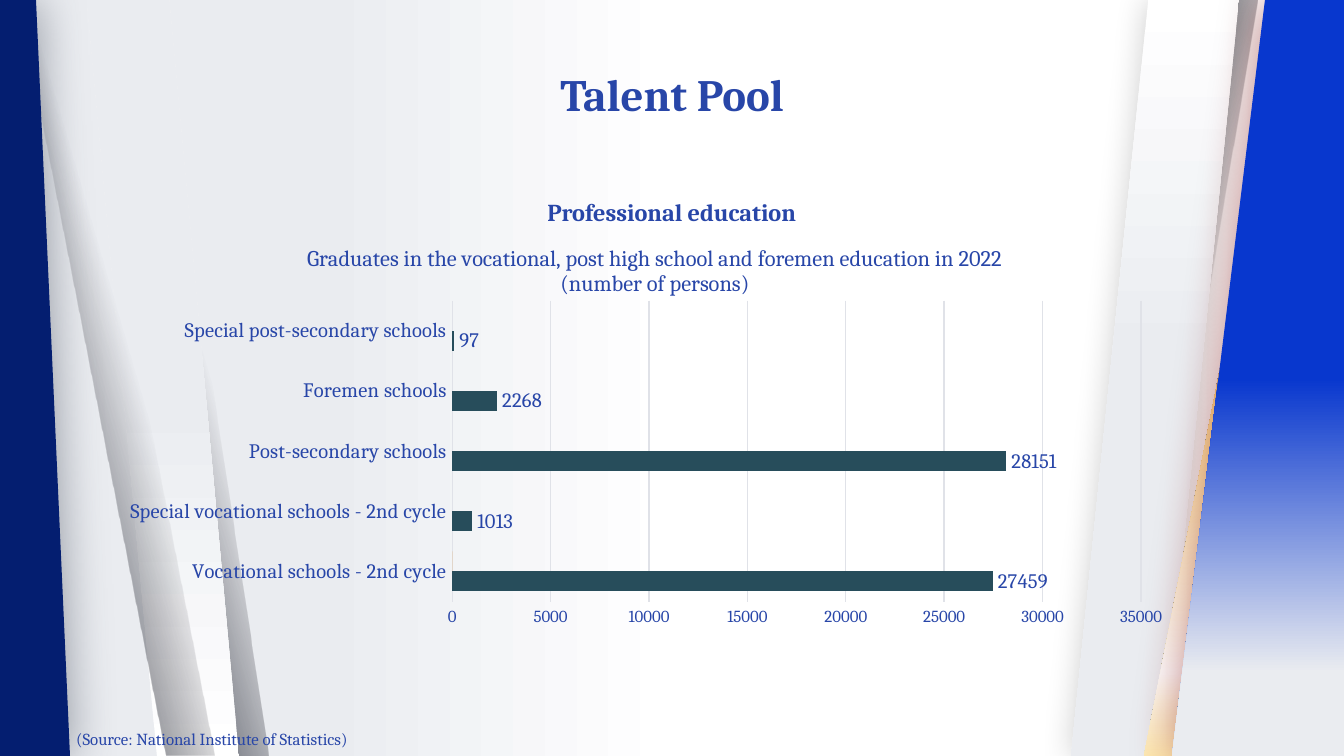
import pptx
import pptx.chart.data
import pptx.dml.color
import pptx.enum.chart
import pptx.enum.shapes
import pptx.enum.text
import pptx.oxml.ns
import pptx.util
from lxml import etree

WIDTH, HEIGHT = 1344, 756
EMU_PER_PX = 9144000 / WIDTH
FONT = "Cambria"
COLORS = {
    "text": "2846A8", "navy": "041E70", "blue": "0837CE", "white": "FFFFFF",
    "mist": "EAECF0", "slate": "3E4655", "coal": "27252C", "gold": "FFDF8C",
    "cream": "FFEAB3", "wine": "7E0808", "black": "000000",
    "grid": "E0E2E8", "bar": "274D5B", "orange": "F78300",
}
SHADE = [(0, "slate"), (13, "slate"), (55, "coal", 0), (100, "coal", 0)]
PANEL = [(0, "white"), (47, "mist"), (100, "mist")]
BACKDROP = [(0, "white"), (50, "white"), (76, "mist"), (100, "mist")]
GLOW = [(0, "blue"), (50, "gold"), (89, "white"), (100, "cream")]
FADE = [(0, "blue"), (50, "blue"), (89, "mist"), (100, "mist")]

GRADUATES = {
    "Vocational schools - 2nd cycle": 27459,
    "Special vocational schools - 2nd cycle": 1013,
    "Post-secondary schools": 28151,
    "Foremen schools": 2268,
    "Special post-secondary schools": 97,
}

qn = pptx.oxml.ns.qn


def px(value):
    return pptx.util.Emu(round(value * EMU_PER_PX))


def rgb(name):
    return pptx.dml.color.RGBColor.from_string(COLORS[name])


def add(parent, tag, **attributes):
    values = {key: str(value) for key, value in attributes.items()}
    return etree.SubElement(parent, qn(tag), values)


def add_color(parent, name, opacity=100):
    color = add(parent, "a:srgbClr", val=COLORS[name])
    if opacity < 100:
        add(color, "a:alpha", val=opacity * 1000)


def set_layout(parent, **values):
    """Place a chart part by fractions of the chart area."""
    layout = parent.find(qn("c:layout"))
    if layout is None:
        layout = add(parent, "c:layout")
        if parent.tag == qn("c:title"):
            parent.find(qn("c:tx")).addnext(layout)
        else:
            parent.insert(0, layout)
    manual = add(layout, "c:manualLayout")
    if "w" in values:
        add(manual, "c:layoutTarget", val="inner")
    for key in ("x", "y"):
        add(manual, f"c:{key}Mode", val="edge")
    for key, value in values.items():
        add(manual, f"c:{key}", val=value)


class SlideBuilder:
    def __init__(self, page):
        self.page = page

    def style_font(self, font, size, bold=False):
        font.name, font.size, font.bold = FONT, pptx.util.Pt(size), bold
        font.color.rgb = rgb("text")

    def gradient(self, fill, holder, stops, angle):
        fill.solid()
        solid = holder.find(qn("a:solidFill"))
        grad = etree.Element(qn("a:gradFill"), rotWithShape="1")
        stop_list = add(grad, "a:gsLst")
        for position, *color in stops:
            add_color(add(stop_list, "a:gs", pos=position * 1000), *color)
        add(grad, "a:lin", ang=angle * 60000, scaled=0)
        holder.replace(solid, grad)

    def background(self, stops, angle):
        fill = self.page.background.fill
        fill.solid()
        holder = self.page._element.find(".//" + qn("p:bgPr"))
        self.gradient(fill, holder, stops, angle)

    def finish(self, shape, fill, angle, shadow):
        shape.shadow.inherit = False
        shape.line.fill.background()
        properties = shape._element.spPr
        if isinstance(fill, str):
            shape.fill.solid()
            shape.fill.fore_color.rgb = rgb(fill)
        else:
            self.gradient(shape.fill, properties, fill, angle)
        if shadow:
            color, opacity, blur = shadow
            outer = add(properties.find(qn("a:effectLst")), "a:outerShdw",
                        blurRad=pptx.util.Pt(blur), dist=0, dir=0,
                        algn="ctr", rotWithShape=0)
            add_color(outer, color, opacity)

    def band(self, left, width, slant, fill, angle, flip=False, shadow=None):
        shape = self.page.shapes.add_shape(
            pptx.enum.shapes.MSO_SHAPE.PARALLELOGRAM,
            px(left), 0, px(width), px(HEIGHT))
        shape.adjustments[0] = slant
        if flip:
            shape._element.spPr.xfrm.set("flipH", "1")
        self.finish(shape, fill, angle, shadow)

    def outline(self, points, fill, angle=0, shadow=None):
        builder = self.page.shapes.build_freeform(*points[0], scale=EMU_PER_PX)
        builder.add_line_segments(points[1:], close=True)
        self.finish(builder.convert_to_shape(), fill, angle, shadow)

    def title(self, text, left, top, width, height):
        box = self.page.shapes.title
        box.left, box.top, box.width, box.height = map(px, (left, top, width, height))
        self.page.shapes._spTree.append(box._element)
        frame = box.text_frame
        frame.vertical_anchor = pptx.enum.text.MSO_ANCHOR.BOTTOM
        self.set_text(frame, text, 24, True, centred=True)

    def text(self, text, left, top, width, height, size, bold=False, centred=False):
        box = self.page.shapes.add_textbox(*map(px, (left, top, width, height)))
        frame = box.text_frame
        frame.auto_size = pptx.enum.text.MSO_AUTO_SIZE.SHAPE_TO_FIT_TEXT
        self.set_text(frame, text, size, bold, centred)
        frame.paragraphs[0].line_spacing = 1.1

    def set_text(self, frame, text, size, bold, centred):
        frame.word_wrap = centred
        para = frame.paragraphs[0]
        para.text = text
        if centred:
            frame.margin_left = frame.margin_right = 0
            frame.margin_top = frame.margin_bottom = 0
            para.alignment = pptx.enum.text.PP_ALIGN.CENTER
        self.style_font(para.font, size, bold)

    def axis(self, axis, size):
        axis.major_tick_mark = axis.minor_tick_mark = pptx.enum.chart.XL_TICK_MARK.NONE
        self.style_font(axis.tick_labels.font, size)

    def grid_line(self, line):
        line.color.rgb = rgb("grid")
        line.width = pptx.util.Pt(0.75)

    def bar_chart(self, values, title_lines, left, top, width, height):
        data = pptx.chart.data.CategoryChartData()
        data.categories = list(values)
        data.add_series("Series 1", list(values.values()))
        data.add_series("Series 2", [0] + [None] * (len(values) - 1))
        chart = self.page.shapes.add_chart(
            pptx.enum.chart.XL_CHART_TYPE.BAR_CLUSTERED,
            *map(px, (left, top, width, height)), data).chart
        chart.has_legend = False
        self.style_font(chart.font, 10)

        # Chart title
        frame = chart.chart_title.text_frame
        frame.text = "\n".join(title_lines)
        for para in frame.paragraphs:
            self.style_font(para.font, 12)
        set_layout(chart.chart_title._element, x=0.19, y=0.05)

        # Axes
        self.axis(chart.category_axis, 11)
        self.grid_line(chart.category_axis.format.line)
        scale = chart.value_axis
        self.axis(scale, 9)
        scale.minimum_scale, scale.maximum_scale, scale.major_unit = 0, 35000, 5000
        scale.format.line.fill.background()
        self.grid_line(scale.major_gridlines.format.line)

        # Bars and their labels
        plot = chart.plots[0]
        plot.gap_width, plot.overlap, plot.vary_by_categories = 100, 0, False
        for series, color in zip(plot.series, ("bar", "orange")):
            series.format.fill.solid()
            series.format.fill.fore_color.rgb = rgb(color)
        labels = plot.series[0].data_labels
        labels.show_value = True
        labels.position = pptx.enum.chart.XL_LABEL_POSITION.OUTSIDE_END
        self.style_font(labels.font, 11)
        plot_area = chart._chartSpace.find(".//" + qn("c:plotArea"))
        set_layout(plot_area, x=0.32, y=0.19, w=0.6, h=0.7)


def main():
    deck = pptx.Presentation()
    deck.slide_width, deck.slide_height = px(WIDTH), px(HEIGHT)
    slide = SlideBuilder(deck.slides.add_slide(deck.slide_layouts[5]))
    slide.background(BACKDROP, 180)

    # Slanted bands at both sides
    slide.band(116, 152, 0.75, SHADE, 196, flip=True)
    slide.band(87, 152, 0.46, PANEL, 270, flip=True)
    slide.band(1089, 168, 0.75, SHADE, 18)
    slide.band(1071, 168, 0.46, PANEL, 90, shadow=("black", 20, 16.9))
    slide.band(19, 195, 0.75, SHADE, 196, flip=True)
    slide.outline([(0, 0), (0, HEIGHT), (70, HEIGHT), (36, 0)],
                  "navy", shadow=("slate", 50, 24.8))
    slide.band(1144, 198, 0.75, GLOW, 90)
    slide.outline([(WIDTH, 0), (WIDTH, HEIGHT), (1172, HEIGHT), (1265, 0)],
                  FADE, 90, shadow=("wine", 50, 24.8))

    # Headings, chart and source
    slide.title("Talent Pool", 0, 62, WIDTH, 58)
    slide.text("Professional education", 294, 194, 755, 30, 13, bold=True, centred=True)
    slide.bar_chart(
        GRADUATES,
        ["Graduates in the vocational, post high school and foremen education in 2022",
         "(number of persons)"],
        85, 219, 1148, 430)
    slide.text("(Source: National Institute of Statistics)", 63, 720, 314, 36, 9)

    deck.save("out.pptx")


if __name__ == "__main__":
    main()
